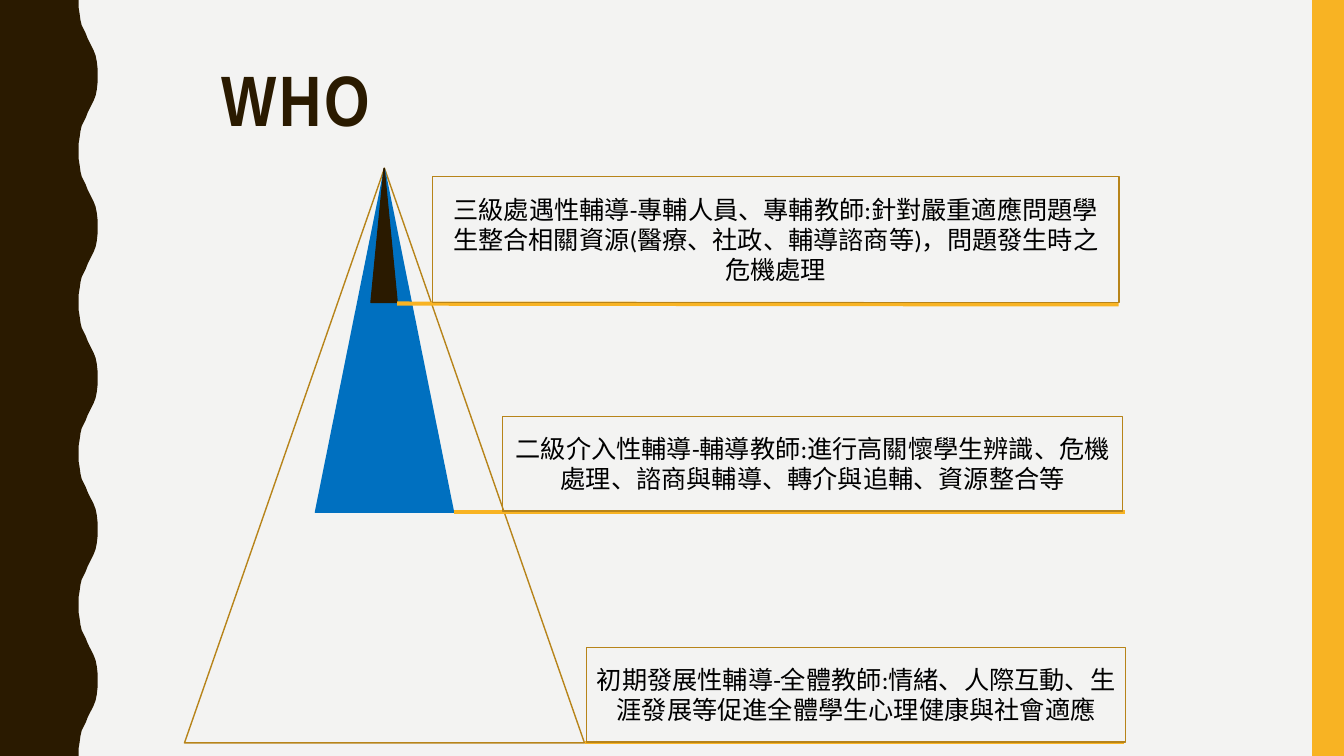
import dataclasses
import typing

import lxml.etree
import pptx
import pptx.dml.color
import pptx.enum.lang
import pptx.enum.shapes
import pptx.enum.text
import pptx.oxml.ns
import pptx.util

Cm = pptx.util.Cm
Pt = pptx.util.Pt
ShapeKind = pptx.enum.shapes.MSO_SHAPE


@dataclasses.dataclass(frozen=True)
class Theme:
    background: str = "F3F3F2"
    dark: str = "2A1A00"
    gold: str = "F8B323"
    outline: str = "B7841A"
    blue: str = "0070C0"
    text: str = "000000"
    title_font: str = "Arial Narrow"
    body_font: str = "Calibri"
    title_size: float = 51
    body_size: float = 18
    outline_width: float = 1


THEME = Theme()
PAGE_WIDTH, PAGE_HEIGHT = 33.87, 19.05


class Area(typing.NamedTuple):
    left: float
    top: float
    width: float
    height: float


@dataclasses.dataclass(frozen=True)
class Level:
    """One counselling level: its triangle, its rule and its label box."""
    text: str
    triangle: Area
    fill: typing.Optional[str]
    line: str
    rule: tuple[float, float, float, float]
    rule_width: float
    label: Area


# Levels from the broad base up to the narrow top
LEVELS = [
    Level("初期發展性輔導-全體教師:情緒、人際互動、生涯發展等促進全體學生心理健康與社會適應",
          Area(4.65, 4.24, 10.08, 14.48), None, THEME.outline,
          (14.73, 18.72, 28.32, 18.72), 2.25, Area(14.78, 16.31, 13.59, 2.39)),
    Level("二級介入性輔導-輔導教師:進行高關懷學生辨識、危機處理、諮商與輔導、轉介與追輔、資源整合等",
          Area(7.95, 4.27, 3.48, 8.64), THEME.blue, THEME.blue,
          (11.43, 12.9, 28.35, 12.9), 3, Area(12.67, 10.49, 15.62, 2.39)),
    Level("三級處遇性輔導-專輔人員、專輔教師:針對嚴重適應問題學生整合相關資源"
          "(醫療、社政、輔導諮商等)，問題發生時之危機處理",
          Area(9.35, 4.24, 0.66, 3.38), THEME.dark, THEME.dark,
          (10.01, 7.65, 28.19, 7.67), 3, Area(10.9, 4.45, 17.3, 3.18)),
]

# Half a wave of the left band: (offset to the right, distance down)
WAVE_LEFT, WAVE_PERIOD, WAVE_COUNT = 1.98, 3.81, 5
HALF_WAVE = [(0, 0), (0, 0.18), (0.03, 0.36), (0.05, 0.51), (0.08, 0.64),
             (0.13, 0.74), (0.18, 0.84), (0.23, 0.97), (0.28, 1.07),
             (0.33, 1.17), (0.38, 1.27), (0.43, 1.4), (0.46, 1.55),
             (0.48, 1.73), (0.48, 1.9)]


def rgb(code: str) -> pptx.dml.color.RGBColor:
    return pptx.dml.color.RGBColor.from_string(code)


def paint(shape, fill: typing.Optional[str], line: typing.Optional[str] = None) -> None:
    shape.shadow.inherit = False
    if fill:
        shape.fill.solid()
        shape.fill.fore_color.rgb = rgb(fill)
    else:
        shape.fill.background()
    if line:
        shape.line.color.rgb = rgb(line)
        shape.line.width = Pt(THEME.outline_width)
    else:
        shape.line.fill.background()


def add_block(page, kind, area: Area, fill=None, line=None):
    shape = page.shapes.add_shape(kind, *map(Cm, area))
    paint(shape, fill, line)
    return shape


def add_span(para, text: str, font: str, size: float, color: str):
    span = para.add_run()
    span.text = text
    span.font.name = font
    span.font.size = Pt(size)
    span.font.color.rgb = rgb(color)
    return span


def add_wave_band(page) -> None:
    wave = HALF_WAVE + [(x, WAVE_PERIOD - y) for x, y in reversed(HALF_WAVE[:-1])]
    edge = [(WAVE_LEFT + x, index * WAVE_PERIOD + y)
            for index in range(WAVE_COUNT) for x, y in wave]
    outline = [(Cm(x), Cm(y)) for x, y in edge + [(0, PAGE_HEIGHT)]]
    builder = page.shapes.build_freeform(0, 0)
    builder.add_line_segments(outline, close=True)
    paint(builder.convert_to_shape(), THEME.dark)


def add_title(page, text: str) -> None:
    box = page.shapes.add_textbox(Cm(5.33), Cm(1.52), Cm(22.86), Cm(2.74))
    box.text_frame.word_wrap = True
    para = box.text_frame.paragraphs[0]
    para.line_spacing = 0.9
    span = add_span(para, text, THEME.title_font, THEME.title_size, THEME.dark)
    span.font.bold = True
    span.font.language_id = pptx.enum.lang.MSO_LANGUAGE_ID.ENGLISH_US
    # Letter spacing, in hundredths of a point
    span.font._element.set("spc", "200")


def add_rule(page, level: Level) -> None:
    rule = page.shapes.add_connector(
        pptx.enum.shapes.MSO_CONNECTOR.STRAIGHT, *map(Cm, level.rule))
    rule.line.color.rgb = rgb(THEME.gold)
    rule.line.width = Pt(level.rule_width)
    lxml.etree.SubElement(rule._element.spPr, pptx.oxml.ns.qn("a:effectLst"))


def add_label(page, level: Level) -> None:
    box = add_block(page, ShapeKind.RECTANGLE, level.label, line=THEME.outline)
    frame = box.text_frame
    frame.word_wrap = True
    frame.vertical_anchor = pptx.enum.text.MSO_ANCHOR.MIDDLE
    para = frame.paragraphs[0]
    para.alignment = pptx.enum.text.PP_ALIGN.CENTER
    add_span(para, level.text, THEME.body_font, THEME.body_size, THEME.text)


def main() -> None:
    deck = pptx.Presentation()
    deck.slide_width, deck.slide_height = Cm(PAGE_WIDTH), Cm(PAGE_HEIGHT)
    page = deck.slides.add_slide(deck.slide_layouts[6])
    page.background.fill.solid()
    page.background.fill.fore_color.rgb = rgb(THEME.background)

    # Side bands and title
    add_wave_band(page)
    add_block(page, ShapeKind.RECTANGLE, Area(33.07, 0, 0.8, PAGE_HEIGHT), THEME.gold)
    add_title(page, "WHO")

    # Nested triangles, then the rule and label of each level
    for level in LEVELS:
        add_block(page, ShapeKind.ISOSCELES_TRIANGLE, level.triangle, level.fill, level.line)
    for level in LEVELS:
        add_rule(page, level)
        add_label(page, level)

    deck.save("out.pptx")


if __name__ == "__main__":
    main()
